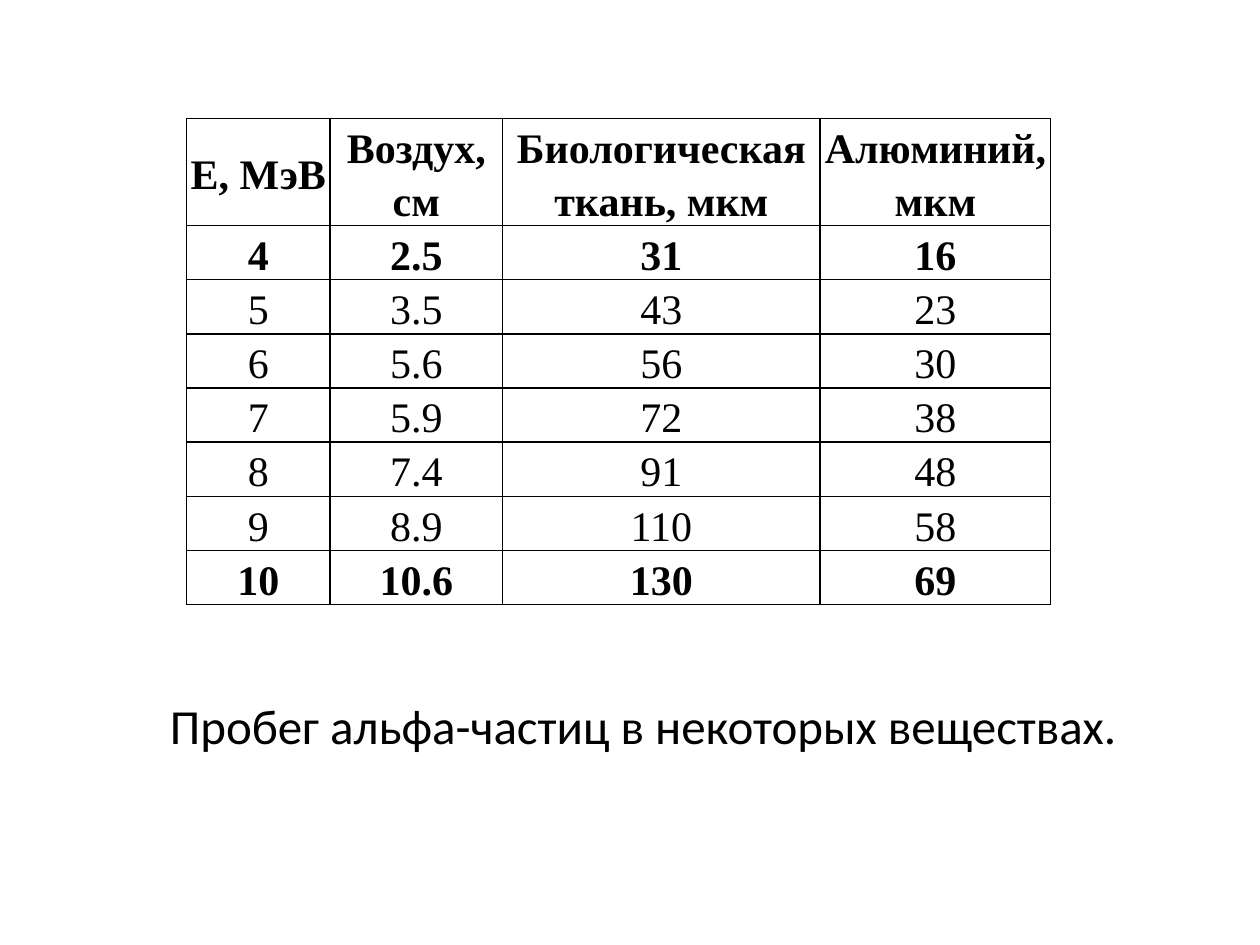
import pptx
import pptx.dml.color
import pptx.enum.text
import pptx.oxml
import pptx.oxml.ns
import pptx.util
from pptx.util import Inches

COLORS = {"text": "000000", "border": "000000"}
HEADERS = ["E, МэВ", "Воздух, см", "Биологическая ткань, мкм", "Алюминий, мкм"]
RANGES = [
    ["4", "2.5", "31", "16"],
    ["5", "3.5", "43", "23"],
    ["6", "5.6", "56", "30"],
    ["7", "5.9", "72", "38"],
    ["8", "7.4", "91", "48"],
    ["9", "8.9", "110", "58"],
    ["10", "10.6", "130", "69"],
]
COLUMN_WIDTHS = [1.14, 1.37, 2.52, 1.83]
HEADER_HEIGHT = 0.85
ROW_HEIGHT = 0.43
BOLD_ENERGIES = {"4", "10"}


def format_runs(paragraph, font_name, size, bold=False):
    for run in paragraph.runs:
        run.font.name = font_name
        run.font.size = pptx.util.Pt(size)
        run.font.bold = bold
        run.font.color.rgb = pptx.dml.color.RGBColor.from_string(COLORS["text"])


def add_borders(cell, width=1):
    """Draw a solid line on all four sides of a cell."""
    properties = cell._tc.get_or_add_tcPr()
    for position, side in enumerate(("lnL", "lnR", "lnT", "lnB")):
        line = pptx.oxml.parse_xml(
            f'<a:{side} {pptx.oxml.ns.nsdecls("a")} w="{pptx.util.Pt(width)}">'
            f'<a:solidFill><a:srgbClr val="{COLORS["border"]}"/></a:solidFill>'
            f'</a:{side}>'
        )
        properties.insert(position, line)


def fill_cell(cell, text, bold):
    cell.fill.background()
    cell.vertical_anchor = pptx.enum.text.MSO_ANCHOR.MIDDLE
    cell.margin_left = cell.margin_right = Inches(0.02)
    cell.margin_top = cell.margin_bottom = 0
    cell.text_frame.text = text
    paragraph = cell.text_frame.paragraphs[0]
    paragraph.alignment = pptx.enum.text.PP_ALIGN.CENTER
    paragraph.line_spacing = 1.15
    format_runs(paragraph, "Times New Roman", 24, bold)
    add_borders(cell)


def add_range_table(slide):
    rows = [HEADERS] + RANGES
    heights = [HEADER_HEIGHT] + [ROW_HEIGHT] * len(RANGES)
    table = slide.shapes.add_table(
        len(rows), len(HEADERS), Inches(1.48), Inches(0.94),
        Inches(sum(COLUMN_WIDTHS)), Inches(sum(heights)),
    ).table
    table.first_row = table.horz_banding = False
    for column, width in zip(table.columns, COLUMN_WIDTHS):
        column.width = Inches(width)
    for row, height, texts in zip(table.rows, heights, rows):
        row.height = Inches(height)
        bold = texts is HEADERS or texts[0] in BOLD_ENERGIES
        for cell, text in zip(row.cells, texts):
            fill_cell(cell, text, bold)


def add_caption(slide, text):
    box = slide.shapes.add_textbox(Inches(1.25), Inches(5.47), Inches(7.79), Inches(0.57))
    text_frame = box.text_frame
    text_frame.word_wrap = False
    text_frame.auto_size = pptx.enum.text.MSO_AUTO_SIZE.SHAPE_TO_FIT_TEXT
    text_frame.text = text
    format_runs(text_frame.paragraphs[0], "Calibri", 28)


def main():
    presentation = pptx.Presentation()
    presentation.slide_width = Inches(10)
    presentation.slide_height = Inches(7.5)
    blank_layout = presentation.slide_layouts[6]
    slide = presentation.slides.add_slide(blank_layout)
    add_range_table(slide)
    add_caption(slide, "Пробег альфа-частиц в некоторых веществах.")
    presentation.save("out.pptx")


if __name__ == "__main__":
    main()
